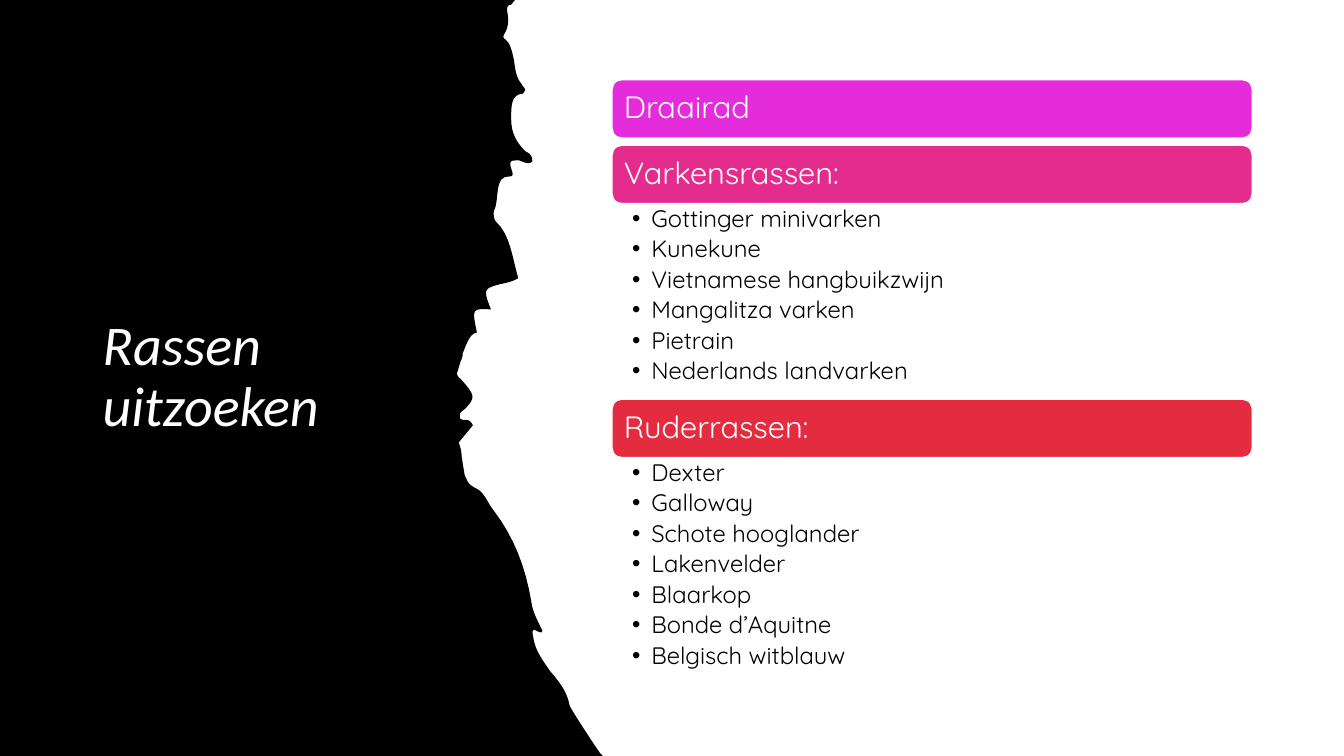
from collections import namedtuple
from itertools import chain

from lxml import etree
from pptx import Presentation, util as u
from pptx.dml.color import RGBColor
from pptx.enum import shapes, text
from pptx.oxml.ns import qn

Box = namedtuple("Box", "left top width height")
Style = namedtuple("Style", "size font colour italic")

COLOURS = {"dark": "000000", "light": "FFFFFF", "wheel": "E42CDA",
           "pigs": "E42C8D", "cattle": "E42C41"}
TITLE = Style(40, "Calibri", "light", True)
HEADING = Style(22, "Quicksand", "light", False)
BREED = Style(17, "Quicksand", "dark", False)

SLIDE = Box(0, 0, 13.33, 7.5)
COLUMN = Box(6.07, 0.79, 6.35, 5.99)
TITLE_MARGIN_X, TITLE_MARGIN_Y, TITLE_WIDTH = 0.92, 0.78, 3.5
BAR_HEIGHT, BAR_GAP = 0.58, 0.07
BREED_PITCH, LIST_PADDING = 0.3, 0.14
BULLET_INDENT = 0.19
LINE_SPACING = 0.9
CURVE_STEPS = 8

SECTIONS = [
    ("Draairad", "wheel", []),
    ("Varkensrassen:", "pigs",
     ["Gottinger minivarken", "Kunekune", "Vietnamese hangbuikzwijn",
      "Mangalitza varken", "Pietrain", "Nederlands landvarken"]),
    ("Ruderrassen:", "cattle",
     ["Dexter", "Galloway", "Schote hooglander", "Lakenvelder", "Blaarkop",
      "Bonde d’Aquitne", "Belgisch witblauw"]),
]

UPPER_TEAR = [
    (5.11, 0), (5.09, 0.02), (5.08, 0.04, 5.07, 0.05, 5.05, 0.05),
    (5.03, 0.06, 5.03, 0.08, 5.03, 0.11), (5.05, 0.21, 5.04, 0.28, 5, 0.34),
    (4.99, 0.36, 4.99, 0.38, 5.01, 0.39), (5.03, 0.41, 5.05, 0.43, 5.06, 0.46),
    (5.08, 0.51, 5.09, 0.56, 5.1, 0.61), (5.11, 0.69, 5.12, 0.77, 5.17, 0.83),
    (5.18, 0.85, 5.2, 0.87, 5.21, 0.89), (5.2, 0.91, 5.19, 0.93, 5.18, 0.93),
    (5.07, 0.94, 5.07, 1.05, 5.07, 1.18), (5.07, 1.33, 5.13, 1.42, 5.21, 1.5),
    (5.24, 1.52, 5.28, 1.53, 5.28, 1.6), (5.24, 1.65, 5.18, 1.59, 5.13, 1.59),
    (5.09, 1.6, 5.03, 1.57, 5.08, 1.7), (5.09, 1.74, 5.08, 1.75, 5.06, 1.75),
    (4.89, 1.74, 4.96, 1.98, 4.9, 2.09), (4.89, 2.12, 4.9, 2.18, 4.92, 2.2),
]
MIDDLE_TEAR = [
    (5.06, 2.33, 5.08, 2.55, 5.14, 2.76), (5.06, 2.81, 4.97, 2.81, 4.89, 2.84),
    (4.8, 2.87, 4.8, 2.9, 4.87, 3.07), (4.68, 3.06, 4.68, 3.06, 4.73, 3.3),
    (4.68, 3.3, 4.64, 3.37, 4.6, 3.48), (4.59, 3.5),
    (4.59, 3.54, 4.58, 3.56, 4.57, 3.58), (4.54, 3.68), (4.53, 3.71),
    (4.54, 3.73, 4.55, 3.75, 4.57, 3.76), (4.71, 3.92, 4.72, 3.94, 4.62, 4.05),
    (4.57, 4.09), (4.56, 4.12), (4.56, 4.15),
    (4.6, 4.19, 4.65, 4.13, 4.69, 4.22), (4.55, 4.39), (4.56, 4.42),
    (4.57, 4.45, 4.58, 4.5, 4.58, 4.54), (4.6, 4.66), (4.61, 4.72),
]
LOWER_TEAR = [
    (4.64, 4.78), (4.66, 4.81, 4.69, 4.83, 4.73, 4.85),
    (4.81, 4.89, 4.84, 5, 4.9, 5.07), (5.09, 5.32, 5.21, 5.61, 5.27, 5.97),
    (5.28, 6.07, 5.34, 6.17, 5.38, 6.26), (5.36, 6.32, 5.25, 6.16, 5.29, 6.33),
    (5.31, 6.46, 5.39, 6.56, 5.45, 6.65), (5.53, 6.75, 5.62, 6.84, 5.65, 7),
    (5.65, 7.01, 5.76, 7.19, 5.95, 7.47), (5.98, 7.5),
]


def colour(name):
    """Return the named colour."""
    return RGBColor.from_string(COLOURS[name])


def emu(box):
    """Convert a box, point or inset tuple from inches."""
    return [u.Inches(length) for length in box]


def paint(shape, shade):
    """Give a shape a flat fill and no shadow."""
    shape.shadow.inherit = False
    shape.fill.solid()
    shape.fill.fore_color.rgb = colour(shade)


def set_frame(frame, insets, anchor):
    """Wrap a text frame and set its insets (left, top, right, bottom)."""
    frame.word_wrap = True
    frame.vertical_anchor = anchor
    (frame.margin_left, frame.margin_top,
     frame.margin_right, frame.margin_bottom) = emu(insets)


def write(paragraph, words, style):
    """Add one left-aligned run in the given style."""
    paragraph.alignment = text.PP_ALIGN.LEFT
    paragraph.line_spacing = LINE_SPACING
    run = paragraph.add_run()
    run.text = words
    run.font.size, run.font.name = u.Pt(style.size), style.font
    run.font.italic = style.italic
    run.font.color.rgb = colour(style.colour)


def add_bullet(paragraph):
    """Give a paragraph a hanging round bullet."""
    properties = paragraph._p.get_or_add_pPr()
    properties.set("marL", str(u.Inches(BULLET_INDENT)))
    properties.set("indent", str(-u.Inches(BULLET_INDENT)))
    etree.SubElement(properties, qn("a:buFont")).set("typeface", "Arial")
    etree.SubElement(properties, qn("a:buChar")).set("char", "•")


def cubic(start, control_1, control_2, end):
    """Yield points along a cubic curve, without its start."""
    for step in range(1, CURVE_STEPS + 1):
        t = step / CURVE_STEPS
        s = 1 - t
        yield tuple(s**3 * a + 3 * s * s * t * b + 3 * s * t * t * c + t**3 * d
                    for a, b, c, d in zip(start, control_1, control_2, end))


def trace(start, segments):
    """Follow lines (x, y) and curves (two controls and an end) as points."""
    points = [start]
    for segment in segments:
        pairs = list(zip(segment[::2], segment[1::2]))
        points.extend(pairs if len(pairs) == 1 else cubic(points[-1], *pairs))
    return points


def torn_panel(slide, box):
    """Draw the dark panel, torn along its right edge."""
    edge = trace((0, 0), chain(UPPER_TEAR, MIDDLE_TEAR, LOWER_TEAR))
    corners = [emu((box.left + x, box.top + y)) for x, y in edge + [(0, box.height)]]
    builder = slide.shapes.build_freeform(*corners[0], scale=1.0)
    builder.add_line_segments(corners[1:], close=True)
    panel = builder.convert_to_shape()
    paint(panel, "dark")
    panel.line.fill.background()


def slide_title(slide, box):
    """Write the title, centred vertically on the dark panel."""
    place = Box(box.left + TITLE_MARGIN_X, box.top + TITLE_MARGIN_Y,
                TITLE_WIDTH, box.height - 2 * TITLE_MARGIN_Y)
    frame = slide.shapes.add_textbox(*emu(place)).text_frame
    set_frame(frame, (0.1, 0.05, 0.1, 0.05), text.MSO_ANCHOR.MIDDLE)
    write(frame.paragraphs[0], "Rassen uitzoeken", TITLE)


def heading_bar(slide, box, words, shade):
    """Draw one rounded heading bar."""
    bar = slide.shapes.add_shape(shapes.MSO_SHAPE.ROUNDED_RECTANGLE, *emu(box))
    paint(bar, shade)
    bar.line.color.rgb = colour("light")
    bar.line.width = u.Pt(1)
    set_frame(bar.text_frame, (0.09, 0.09, 0.09, 0.09), text.MSO_ANCHOR.MIDDLE)
    write(bar.text_frame.paragraphs[0], words, HEADING)


def breed_list(slide, box, breeds):
    """Write the bulleted breeds below a heading bar."""
    frame = slide.shapes.add_textbox(*emu(box)).text_frame
    set_frame(frame, (0.2, 0.03, 0.17, 0.03), text.MSO_ANCHOR.TOP)
    for index, breed in enumerate(breeds):
        item = frame.add_paragraph() if index else frame.paragraphs[0]
        item.level = 1
        item.space_after = u.Pt(3.4)
        add_bullet(item)
        write(item, breed, BREED)


def breed_column(slide, box):
    """Stack the heading bars and their lists from the top down."""
    top = box.top
    for words, shade, breeds in SECTIONS:
        heading_bar(slide, Box(box.left, top, box.width, BAR_HEIGHT), words, shade)
        top += BAR_HEIGHT
        below = LIST_PADDING + BREED_PITCH * len(breeds) if breeds else BAR_GAP
        if breeds:
            breed_list(slide, Box(box.left, top, box.width, below), breeds)
        top += below


def main():
    """Build the slide and save it."""
    deck = Presentation()
    deck.slide_width, deck.slide_height = emu((SLIDE.width, SLIDE.height))
    slide = deck.slides.add_slide(deck.slide_layouts[6])
    torn_panel(slide, SLIDE)
    slide_title(slide, SLIDE)
    breed_column(slide, COLUMN)
    deck.save("out.pptx")


if __name__ == "__main__":
    main()
